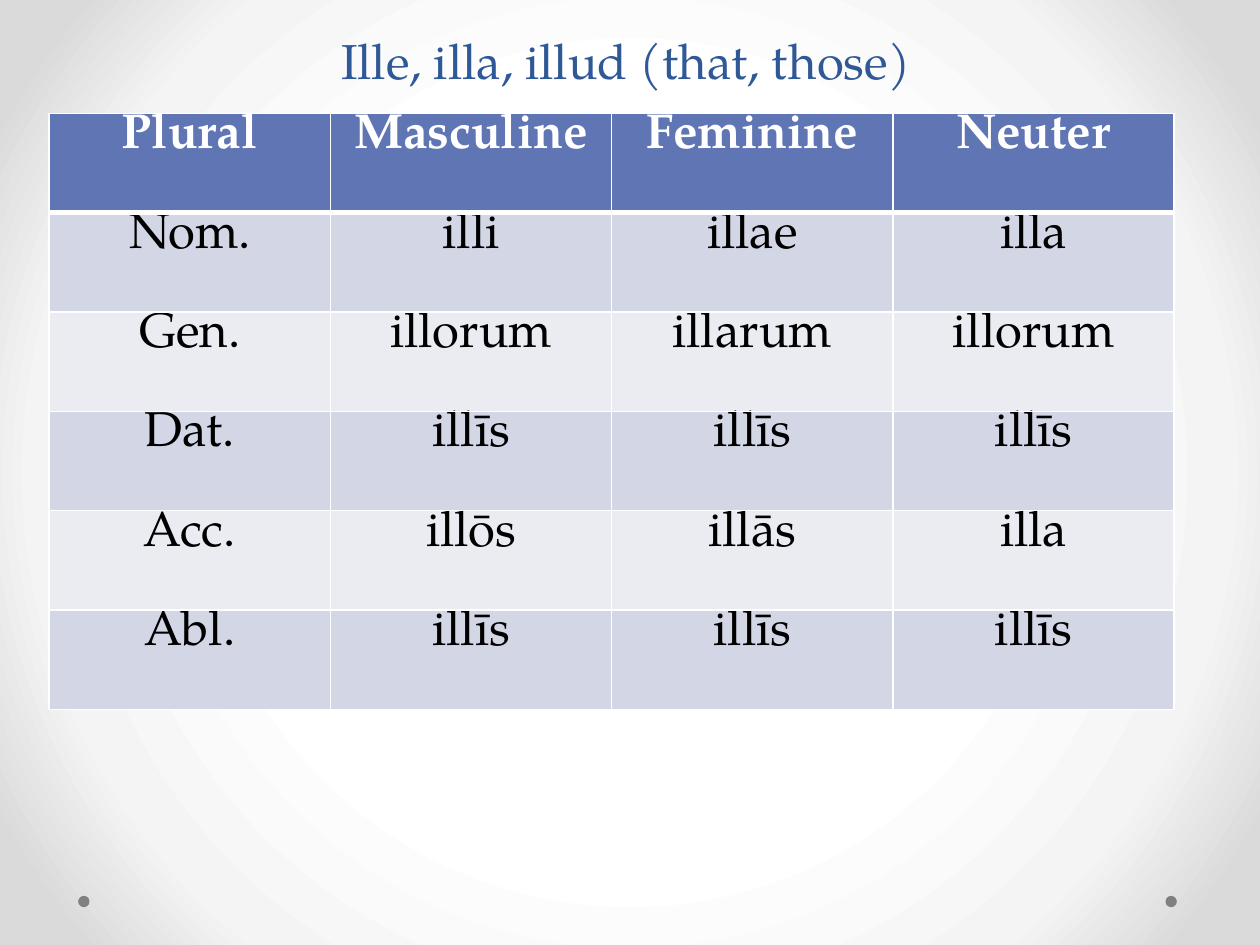
from lxml import etree
from pptx import Presentation
from pptx.dml.color import RGBColor
from pptx.enum.shapes import MSO_SHAPE
from pptx.enum.text import MSO_ANCHOR, PP_ALIGN
from pptx.oxml import parse_xml
from pptx.oxml.ns import nsdecls, qn
from pptx.util import Inches, Pt

COLORS = {
    "title": "2F5897", "head": "6076B4", "odd": "D2D6E5", "even": "EAECF2",
    "white": "FFFFFF", "black": "000000", "dot": "808080",
    "pale": "F4F4F4", "edge": "DADADA",
}
FORMS = [
    ["Plural", "Masculine", "Feminine", "Neuter"],
    ["Nom.", "illi", "illae", "illa"],
    ["Gen.", "illorum", "illarum", "illorum"],
    ["Dat.", "illīs", "illīs", "illīs"],
    ["Acc.", "illōs", "illās", "illa"],
    ["Abl.", "illīs", "illīs", "illīs"],
]


def color(name):
    return RGBColor.from_string(COLORS[name])


class Deck:
    font = "TeX Gyre Pagella"
    size = 28

    def __init__(self, slide):
        self.slide = slide

    def glow(self, stops):
        """Fill the background with a gradient that spreads from the centre."""
        self.slide.background.fill.solid()
        marks = "".join(
            f'<a:gs pos="{pos * 1000}"><a:srgbClr val="{COLORS[name]}"/></a:gs>'
            for pos, name in stops)
        grad = parse_xml(
            f'<a:gradFill {nsdecls("a")} rotWithShape="1"><a:gsLst>{marks}</a:gsLst>'
            '<a:path path="circle"><a:fillToRect l="50000" t="50000" r="50000" b="50000"/>'
            '</a:path></a:gradFill>')
        props = self.slide.element.cSld.bg.bgPr
        props.replace(props.find(qn("a:solidFill")), grad)

    def text(self, frame, words, hue, bold=False):
        par = frame.paragraphs[0]
        par.alignment = PP_ALIGN.CENTER
        run = par.add_run()
        run.text = words
        font = run.font
        font.name, font.size, font.bold = self.font, Pt(self.size), bold
        font.color.rgb = color(hue)

    def title(self, words, left, top, width, height):
        box = self.slide.shapes.add_textbox(
            Inches(left), Inches(top), Inches(width), Inches(height))
        frame = box.text_frame
        frame.word_wrap = True
        frame.vertical_anchor = MSO_ANCHOR.BOTTOM
        self.text(frame, words, "title")

    def dot(self, left, top, size):
        shape = self.slide.shapes.add_shape(
            MSO_SHAPE.OVAL, Inches(left), Inches(top), Inches(size), Inches(size))
        shape.shadow.inherit = False
        shape.fill.solid()
        shape.fill.fore_color.rgb = color("dot")
        shape.line.fill.background()

    def border(self, cell, widths):
        props = cell._tc.get_or_add_tcPr()
        for spot, (side, width) in enumerate(widths.items()):
            line = etree.Element(qn(f"a:ln{side}"), w=str(Pt(width)))
            fill = etree.SubElement(line, qn("a:solidFill"))
            etree.SubElement(fill, qn("a:srgbClr"), val=COLORS["white"])
            props.insert(spot, line)

    def table(self, rows, left, top, width, height):
        grid = self.slide.shapes.add_table(
            len(rows), len(rows[0]), Inches(left), Inches(top),
            Inches(width), Inches(height)).table
        for i, row in enumerate(rows):
            head = i == 0
            tint = "head" if head else "odd" if i % 2 else "even"
            for j, words in enumerate(row):
                cell = grid.cell(i, j)
                cell.margin_top = cell.margin_bottom = 0
                cell.fill.solid()
                cell.fill.fore_color.rgb = color(tint)
                self.border(cell, {"L": 1, "R": 1, "T": 3 if i == 1 else 1,
                                   "B": 3 if head else 1})
                self.text(cell.text_frame, words, "white" if head else "black", head)


def main():
    prs = Presentation()
    prs.slide_width, prs.slide_height = Inches(10), Inches(7.5)
    deck = Deck(prs.slides.add_slide(prs.slide_layouts[6]))
    deck.glow([(50, "white"), (76, "pale"), (92, "edge")])
    for left in (9.25, 0.62):
        deck.dot(left, 7.11, 0.09)
    deck.title("Ille, illa, illud (that, those)", 1.84, -0.22, 6.25, 0.98)
    deck.table(FORMS, 0.39, 0.9, 8.93, 4.73)
    prs.save("out.pptx")


if __name__ == "__main__":
    main()
